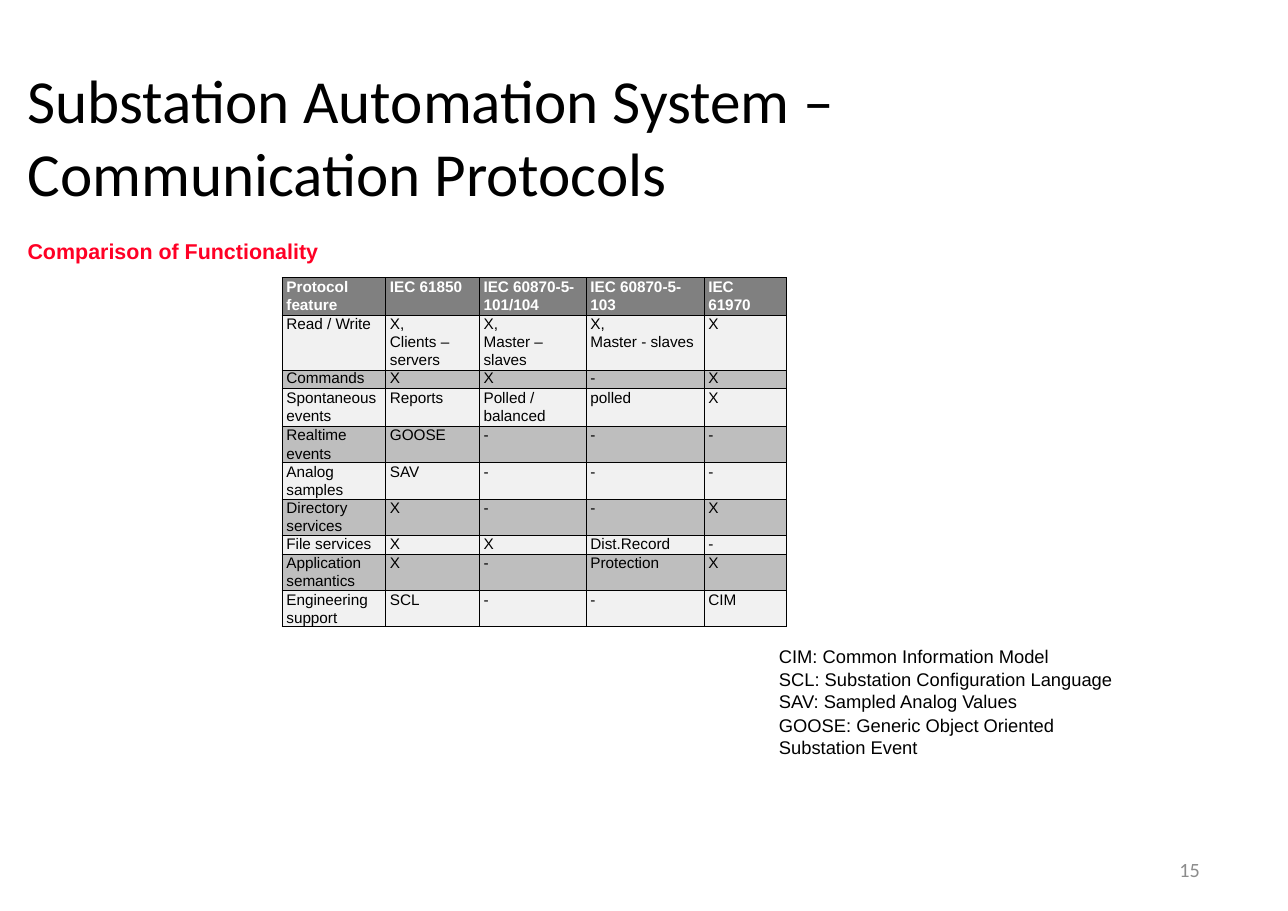
from lxml import etree
from pptx import Presentation
from pptx.dml.color import RGBColor
from pptx.enum.text import MSO_ANCHOR, MSO_AUTO_SIZE, PP_ALIGN
from pptx.oxml.ns import qn
from pptx.util import Inches, Pt

BLACK = RGBColor(0x00, 0x00, 0x00)
WHITE = RGBColor(0xFF, 0xFF, 0xFF)
RED = RGBColor(0xFF, 0x00, 0x25)
NUMBER_GRAY = RGBColor(0x8C, 0x8C, 0x8C)
HEADER_GRAY = RGBColor(0x80, 0x80, 0x80)
LIGHT_BAND = RGBColor(0xF1, 0xF1, 0xF1)
DARK_BAND = RGBColor(0xBE, 0xBE, 0xBE)

LEFT, RIGHT = PP_ALIGN.LEFT, PP_ALIGN.RIGHT
TOP, MIDDLE = MSO_ANCHOR.TOP, MSO_ANCHOR.MIDDLE
NO_AUTOFIT = MSO_AUTO_SIZE.NONE
TITLE_ONLY = 5

COLUMN_WIDTHS = [0.94, 0.85, 0.97, 1.07, 0.75]
RIGHT_MARGINS = [0.03, 0.03, 0.05, 0.03, 0.15]
ROW_HEIGHTS = [0.34, 0.5, 0.17, 0.34, 0.33, 0.33, 0.33, 0.17, 0.33, 0.33]
PROTOCOL_ROWS = [
    ["Protocol feature", "IEC 61850", "IEC 60870-5- 101/104", "IEC 60870-5-\n103", "IEC 61970"],
    ["Read / Write", "X,\nClients – servers", "X,\nMaster – slaves", "X,\nMaster - slaves", "X"],
    ["Commands", "X", "X", "-", "X"],
    ["Spontaneous events", "Reports", "Polled / balanced", "polled", "X"],
    ["Realtime events", "GOOSE", "-", "-", "-"],
    ["Analog samples", "SAV", "-", "-", "-"],
    ["Directory services", "X", "-", "-", "X"],
    ["File services", "X", "X", "Dist.Record", "-"],
    ["Application semantics", "X", "-", "Protection", "X"],
    ["Engineering support", "SCL", "-", "-", "CIM"],
]
ABBREVIATIONS = (
    "CIM: Common Information Model\n"
    "SCL: Substation Configuration Language SAV: Sampled Analog Values\n"
    "GOOSE: Generic Object Oriented Substation Event"
)


def write_text(frame, text, size, font="Arial", color=BLACK, bold=False,
               align=LEFT, line_spacing=None, space_before=0):
    frame.word_wrap = True
    frame.text = text
    for paragraph in frame.paragraphs:
        paragraph.alignment = align
        paragraph.space_before = Pt(space_before)
        if line_spacing:
            paragraph.line_spacing = line_spacing
        for run in paragraph.runs:
            run.font.size = Pt(size)
            run.font.name = font
            run.font.bold = bold
            run.font.color.rgb = color


def set_margins(frame, left=0, top=0, right=0, bottom=0):
    frame.margin_left = Inches(left)
    frame.margin_top = Inches(top)
    frame.margin_right = Inches(right)
    frame.margin_bottom = Inches(bottom)


def add_title(slide, left, top, width, height):
    title = slide.shapes.title
    title.left, title.top = Inches(left), Inches(top)
    title.width, title.height = Inches(width), Inches(height)
    frame = title.text_frame
    frame.auto_size = NO_AUTOFIT
    frame.vertical_anchor = MIDDLE
    set_margins(frame, left=0.01, top=0.02)
    write_text(frame, "Substation Automation System – Communication Protocols",
               40, font="Calibri", space_before=1.1)


def add_label(slide, text, left, top, width, height, anchor=TOP, right_margin=0, **text_format):
    label = slide.shapes.add_textbox(Inches(left), Inches(top), Inches(width), Inches(height))
    frame = label.text_frame
    frame.vertical_anchor = anchor
    set_margins(frame, left=0.01, top=0.01, right=right_margin)
    write_text(frame, text, **text_format)


def add_borders(cell):
    properties = cell._tc.get_or_add_tcPr()
    for position, side in enumerate(("a:lnL", "a:lnR", "a:lnT", "a:lnB")):
        line = etree.Element(qn(side), w=str(Pt(0.5)))
        fill = etree.SubElement(line, qn("a:solidFill"))
        etree.SubElement(fill, qn("a:srgbClr"), val=str(BLACK))
        properties.insert(position, line)


def add_protocol_table(slide, left, top, width, height):
    shape = slide.shapes.add_table(len(PROTOCOL_ROWS), len(COLUMN_WIDTHS), Inches(left),
                                   Inches(top), Inches(width), Inches(height))
    table = shape.table
    for column, column_width in zip(table.columns, COLUMN_WIDTHS):
        column.width = Inches(column_width)
    for row_index, (row, row_height) in enumerate(zip(table.rows, ROW_HEIGHTS)):
        row.height = Inches(row_height)
        header = row_index == 0
        band = LIGHT_BAND if row_index % 2 else DARK_BAND
        line_spacing = Pt(11.2 if row_height < 0.2 else 11.8)
        for cell, text, right in zip(row.cells, PROTOCOL_ROWS[row_index], RIGHT_MARGINS):
            set_margins(cell, left=0.04, right=right)
            write_text(cell.text_frame, text, 10, color=WHITE if header else BLACK,
                       bold=header, line_spacing=line_spacing)
            cell.fill.solid()
            cell.fill.fore_color.rgb = HEADER_GRAY if header else band
            add_borders(cell)


def build_protocol_slide(presentation):
    slide = presentation.slides.add_slide(presentation.slide_layouts[TITLE_ONLY])
    add_title(slide, 0.24, 0.54, 9.11, 1.36)
    add_label(slide, "Comparison of Functionality", 0.24, 2.15, 2.8, 0.26,
              size=14, color=RED, bold=True, space_before=0.9)
    add_protocol_table(slide, 2.56, 2.52, sum(COLUMN_WIDTHS), sum(ROW_HEIGHTS))
    add_label(slide, ABBREVIATIONS, 7.06, 5.84, 3.92, 0.85, right_margin=0.7,
              size=12, line_spacing=1.02, space_before=0.5)
    add_label(slide, "15", 8.26, 7.67, 2.63, 0.44, anchor=MIDDLE,
              size=13.2, font="Calibri", color=NUMBER_GRAY, align=RIGHT)


def main():
    presentation = Presentation()
    presentation.slide_width = Inches(11.69)
    presentation.slide_height = Inches(8.27)
    build_protocol_slide(presentation)
    presentation.save("out.pptx")


if __name__ == "__main__":
    main()
